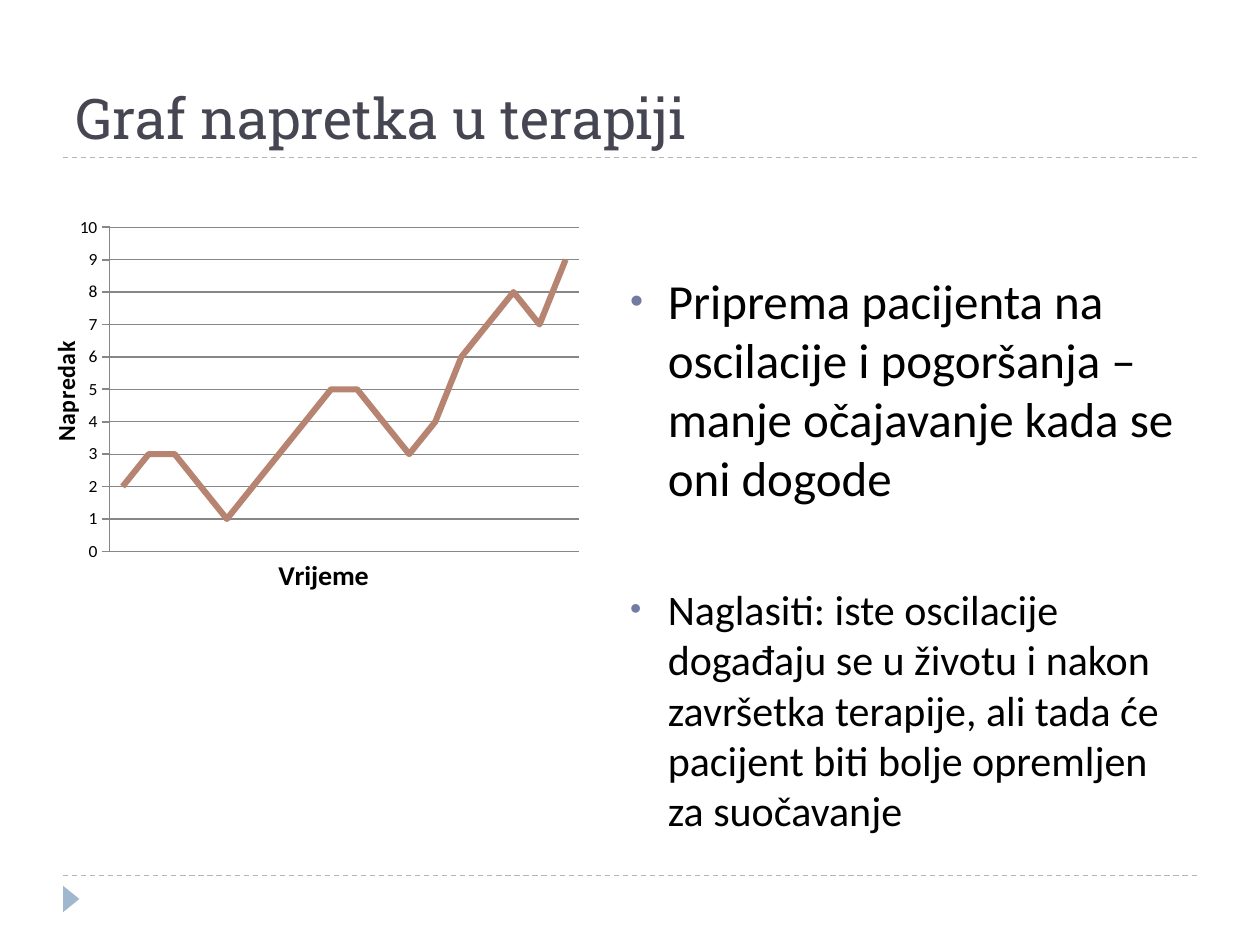
"""Build the therapy progress slide with a line chart and two bullets."""
from dataclasses import dataclass
from typing import Any

from lxml import etree
from pptx import Presentation
from pptx import util as u
from pptx.chart.data import CategoryChartData
from pptx.dml.color import RGBColor
from pptx.enum import chart as ch, dml, shapes, text as tx
from pptx.oxml.ns import qn


@dataclass(frozen=True)
class Theme:
    title: str = "464653"
    ink: str = "000000"
    mark: str = "9FB8CD"
    rule: str = "B4B4B4"
    dot: str = "727CA3"
    axis: str = "878787"
    line: str = "B88472"
    head: str = "Roboto Slab"
    font: str = "Calibri"
    big: int = 32
    small: int = 10


@dataclass(frozen=True)
class Point:
    text: str
    size: int
    gap: int


@dataclass(frozen=True)
class Name:
    text: str
    size: int
    x: float
    y: float
    turn: int


T = Theme()
RULES = (1.25, 6.95)
POINTS = (
    Point("Priprema pacijenta na oscilacije i pogoršanja – manje očajavanje kada se oni dogode", 28, 0),
    Point("Naglasiti: iste oscilacije događaju se u životu i nakon završetka terapije, "
          "ali tada će pacijent biti bolje opremljen za suočavanje", 24, 44),
)
TIME = Name("Vrijeme", 16, 0.42, 0.9, 0)
GAIN = Name("Napredak", 14, 0, 0.35, -90)
VALUES = (2, 3, 3, 2, 1, 2, 3, 4, 5, 5, 4, 3, 4, 6, 7, 8, 7, 9)


def rgb(code: str) -> RGBColor:
    return RGBColor.from_string(code)


def style(font: Any, size: float, color: str = T.ink, face: str = T.font, bold: bool = False) -> None:
    font.size, font.name, font.bold = u.Pt(size), face, bold
    font.color.rgb = rgb(color)


def write(para: Any, words: str, **form: Any) -> None:
    run = para.add_run()
    run.text = words
    style(run.font, **form)


def place(shape: Any, x: float, y: float, w: float, h: float) -> None:
    shape.left, shape.top, shape.width, shape.height = map(u.Inches, (x, y, w, h))


def stroke(line: Any, color: str, width: float) -> None:
    line.color.rgb = rgb(color)
    line.width = u.Pt(width)


def rule(slide: Any, y: float) -> None:
    line = slide.shapes.add_connector(
        shapes.MSO_CONNECTOR.STRAIGHT, *map(u.Inches, (0.5, y, 9.5, y)))
    stroke(line.line, T.rule, 0.75)
    line.line.dash_style = dml.MSO_LINE.DASH
    etree.SubElement(line._element.spPr, qn("a:effectLst"))


def mark(slide: Any) -> None:
    shape = slide.shapes.add_shape(
        shapes.MSO_SHAPE.ISOSCELES_TRIANGLE, *map(u.Inches, (0.46, 7.07, 0.21, 0.13)))
    shape.rotation = 90
    shape.shadow.inherit = False
    shape.fill.solid()
    shape.fill.fore_color.rgb = rgb(T.mark)
    shape.line.fill.background()


def bullet(para: Any, point: Point) -> None:
    write(para, point.text, size=point.size)
    para.space_before = u.Pt(point.gap)
    para.line_spacing = 1.0
    props = para._p.get_or_add_pPr()
    props.set("marL", str(u.Inches(0.3)))
    props.set("indent", str(-u.Inches(0.3)))
    color = etree.SubElement(props, qn("a:buClr"))
    etree.SubElement(color, qn("a:srgbClr"), val=T.dot)
    etree.SubElement(props, qn("a:buSzPct"), val="76000")
    etree.SubElement(props, qn("a:buFont"), typeface="Arial")
    etree.SubElement(props, qn("a:buChar"), char="•")


def layout(node: Any, **parts: Any) -> None:
    spot = node.find(qn("c:layout"))
    if spot is None:
        spot = etree.Element(qn("c:layout"))
        node.insert(0, spot)
    form = etree.SubElement(spot, qn("c:manualLayout"))
    for key, val in parts.items():
        etree.SubElement(form, qn(f"c:{key}"), val=str(val))


def label(axis: Any, name: Name) -> None:
    frame = axis.axis_title.text_frame
    write(frame.paragraphs[0], name.text, size=name.size, bold=True)
    frame._txBody.bodyPr.set("rot", str(name.turn * 60000))
    layout(axis.axis_title._element, xMode="edge", yMode="edge", x=name.x, y=name.y)


def graph(slide: Any) -> None:
    data = CategoryChartData()
    data.categories = [str(n + 1) for n in range(len(VALUES))]
    data.add_series("Napredak", VALUES)
    chart = slide.shapes.add_chart(
        ch.XL_CHART_TYPE.LINE, *map(u.Inches, (0.35, 1.62, 4.33, 3.15)), data).chart
    chart.has_legend = chart.has_title = False
    style(chart.font, T.small)
    plot = chart.plots[0]
    plot.vary_by_categories = False
    row = plot.series[0]
    row.smooth = False
    row.marker.style = ch.XL_MARKER_STYLE.NONE
    stroke(row.format.line, T.line, 3.5)
    cat, val = chart.category_axis, chart.value_axis
    for axis, name in ((cat, TIME), (val, GAIN)):
        stroke(axis.format.line, T.axis, 1)
        axis.minor_tick_mark = ch.XL_TICK_MARK.NONE
        label(axis, name)
    cat.major_tick_mark = ch.XL_TICK_MARK.NONE
    cat.tick_label_position = ch.XL_TICK_LABEL_POSITION.NONE
    val.major_tick_mark = ch.XL_TICK_MARK.OUTSIDE
    val.minimum_scale, val.maximum_scale, val.major_unit = 0, 10, 1
    stroke(val.major_gridlines.format.line, T.axis, 0.75)
    area = chart._chartSpace.find(f".//{qn('c:plotArea')}")
    layout(area, layoutTarget="inner", xMode="edge", yMode="edge",
           x=0.12, y=0.06, w=0.86, h=0.84)


def main() -> None:
    deck = Presentation()
    deck.slide_width, deck.slide_height = u.Inches(10), u.Inches(7.5)
    slide = deck.slides.add_slide(deck.slide_layouts[1])
    for y in RULES:
        rule(slide, y)
    mark(slide)
    title, body = slide.shapes.title, slide.placeholders[1]
    place(title, 0.5, 0.17, 9, 1.08)
    place(body, 4.9, 2.1, 4.6, 4.64)
    for shape in (title, body):
        shape.text_frame.auto_size = tx.MSO_AUTO_SIZE.NONE
    title.text_frame.vertical_anchor = tx.MSO_ANCHOR.BOTTOM
    head = title.text_frame.paragraphs[0]
    head.alignment = tx.PP_ALIGN.LEFT
    write(head, "Graf napretka u terapiji", size=T.big, color=T.title, face=T.head)
    frame = body.text_frame
    for n, point in enumerate(POINTS):
        bullet(frame.add_paragraph() if n else frame.paragraphs[0], point)
    graph(slide)
    deck.save("out.pptx")


if __name__ == "__main__":
    main()
